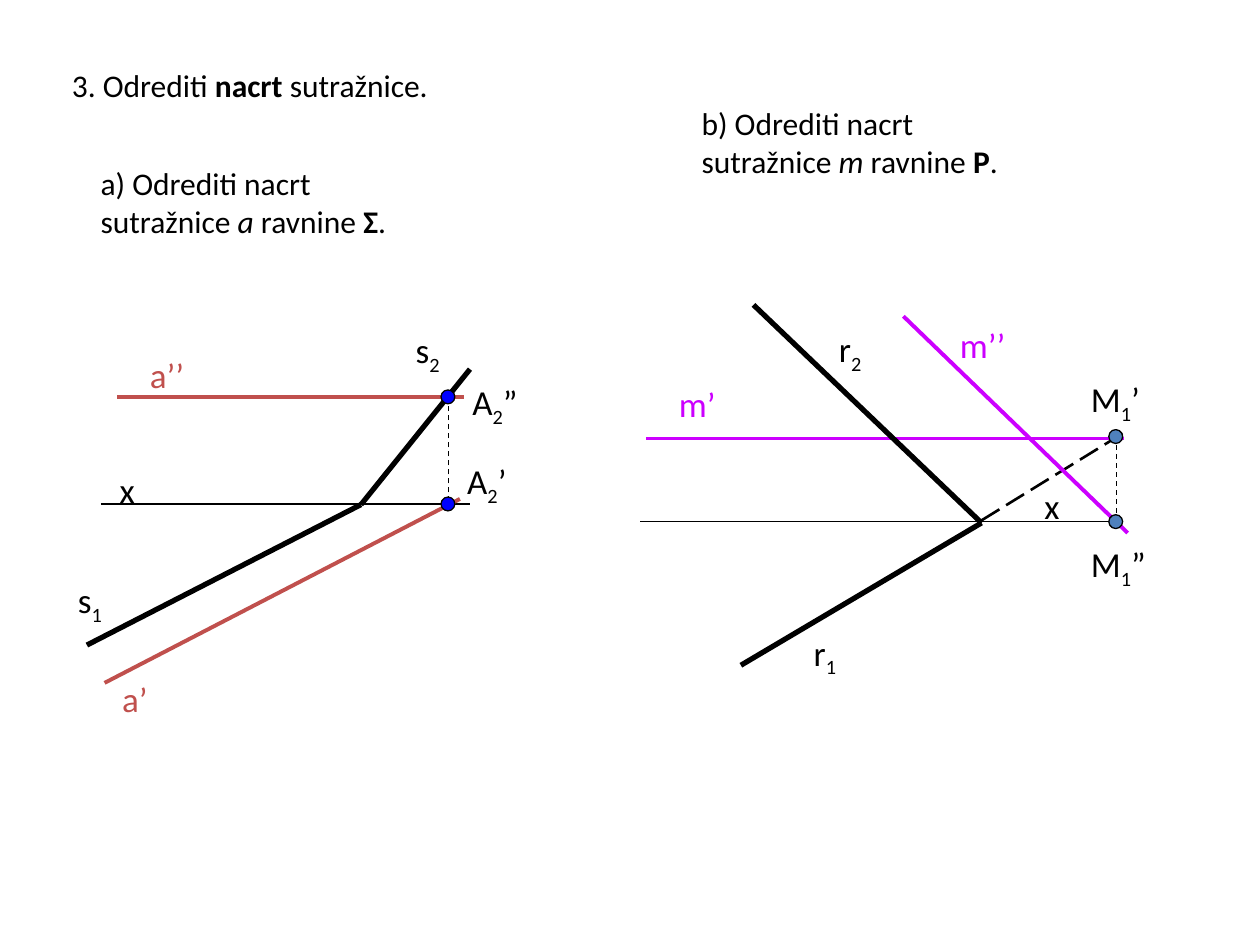
from itertools import pairwise

from lxml.etree import SubElement
from pptx import Presentation
from pptx.dml.color import RGBColor
from pptx.enum.dml import MSO_LINE
from pptx.enum.shapes import MSO_CONNECTOR, MSO_SHAPE
from pptx.enum.text import MSO_ANCHOR, MSO_AUTO_SIZE, PP_ALIGN
from pptx.oxml.ns import qn
from pptx.util import Inches, Pt

BLACK = RGBColor(0x00, 0x00, 0x00)
RED = RGBColor(0xC0, 0x50, 0x4D)
MAGENTA = RGBColor(0xCC, 0x00, 0xFF)
BLUE = RGBColor(0x00, 0x00, 0xFF)
STEEL = RGBColor(0x4F, 0x81, 0xBD)

COLS, ROWS = 100, 75
THIN, DASHED, TRACE_LINE, TRACE = 0.75, 1.5, 2.25, 3
DOT = 1.1


class Board:
    """Draws on one slide; every length is in columns and rows of the grid."""

    font = "Calibri"
    text_size, label_size = 18, 20

    def __init__(self, prs):
        self.s = prs.slides.add_slide(prs.slide_layouts[5])
        self.col = prs.slide_width / COLS
        self.row = prs.slide_height / ROWS

    def place(self, x, y, w, h):
        return (round(x * self.col), round(y * self.row),
                round(w * self.col), round(h * self.row))

    def fill_text(self, sp, parts, size, color=BLACK):
        """Fill sp with (text, style) parts; style is "", "b", "i" or "sub"."""
        tf = sp.text_frame
        tf.word_wrap = True
        tf.auto_size = MSO_AUTO_SIZE.NONE
        tf.vertical_anchor = MSO_ANCHOR.TOP
        p = tf.paragraphs[0]
        p.alignment = PP_ALIGN.LEFT
        for text, style in parts:
            r = p.add_run()
            r.text = text
            r.font.name = self.font
            r.font.size = Pt(size)
            r.font.color.rgb = color
            r.font.bold = style == "b"
            r.font.italic = style == "i"
            if style == "sub":
                r.font._element.set("baseline", "-25000")

    def title(self, box, parts):
        sp = self.s.shapes.title
        sp.left, sp.top, sp.width, sp.height = self.place(*box)
        self.fill_text(sp, parts, self.text_size)

    def text(self, box, parts):
        sp = self.s.shapes.add_textbox(*self.place(*box))
        self.fill_text(sp, parts, self.text_size)

    def label(self, x, y, w, name, sub="", primes="", color=BLACK):
        sp = self.s.shapes.add_textbox(*self.place(x, y, w, 4.4))
        parts = [(name, ""), (sub, "sub"), (primes, "")]
        self.fill_text(sp, [part for part in parts if part[0]],
                       self.label_size, color)

    def line(self, *points, width=THIN, color=BLACK, dash=None):
        """Join the points, in order, with straight lines."""
        for (x1, y1), (x2, y2) in pairwise(points):
            c = self.s.shapes.add_connector(
                MSO_CONNECTOR.STRAIGHT,
                *self.place(x1, y1, x2, y2))
            c.line.width = Pt(width)
            c.line.color.rgb = color
            if dash:
                c.line.dash_style = dash
            SubElement(c._element.spPr, qn("a:effectLst"))

    def dot(self, x, y, color):
        """Mark the point with its centre at x, y."""
        sp = self.s.shapes.add_shape(
            MSO_SHAPE.OVAL, *self.place(x - DOT / 2, y - DOT / 2, DOT, DOT))
        sp.shadow.inherit = False
        sp.fill.solid()
        sp.fill.fore_color.rgb = color
        sp.line.color.rgb = BLACK
        sp.line.width = Pt(THIN)


def draw_task_a(b):
    b.text((7, 12.5, 26.6, 7.1),
           [("a) Odrediti nacrt sutražnice ", ""), ("a", "i"),
            (" ravnine ", ""), ("Σ", "b"), (".", "")])
    b.line((8, 40), (37.3, 40))
    b.line((37.3, 29.3), (28.65, 40.05), (6.9, 51.2), width=TRACE)
    b.line((8.3, 54.2), (36.5, 39.6), width=TRACE_LINE, color=RED)
    b.line((9.3, 31.5), (36.8, 31.5), width=TRACE_LINE, color=RED)
    b.line((35.6, 39.8), (35.6, 31.1), dash=MSO_LINE.DASH)
    for y in (31.5, 40):
        b.dot(35.55, y, BLUE)
    b.label(5.2, 45.4, 6.5, "s", "1")
    b.label(32, 25.6, 5.1, "s", "2")
    b.label(8.7, 53.3, 7.1, "a’", color=RED)
    b.label(10.9, 27.6, 5.9, "a’’", color=RED)
    b.label(36.1, 36, 5.7, "A", "2", "’")
    b.label(36.5, 29.7, 6.6, "A", "2", "”")
    b.label(8.5, 36.7, 4.1, "x")


def draw_task_b(b):
    b.text((54.7, 7.8, 25.7, 7.1),
           [("b) Odrediti nacrt sutražnice ", ""), ("m", "i"),
            (" ravnine ", ""), ("P", "b"), (".", "")])
    b.line((51.3, 34.8), (85.9, 34.8), (89.2, 34.8),
           width=TRACE_LINE, color=MAGENTA)
    b.line((50.8, 41.4), (89, 41.4))
    b.line((59.8, 24.2), (77.9, 41.5), (58.8, 52.8), width=TRACE)
    b.line((77.9, 41.3), (89.1, 34.4), width=DASHED, dash=MSO_LINE.LONG_DASH)
    b.line((71.7, 25.1), (89.5, 42.3), width=TRACE_LINE, color=MAGENTA)
    b.line((88.6, 34.6), (88.6, 41.4), dash=MSO_LINE.DASH)
    for y in (34.65, 41.4):
        b.dot(88.55, y, STEEL)
    b.label(63.6, 49.6, 6.4, "r", "1")
    b.label(65.6, 25.5, 6.8, "r", "2")
    b.label(52.9, 29.9, 7.9, "m’", color=MAGENTA)
    b.label(75.2, 25.2, 6.9, "m’’", color=MAGENTA)
    b.label(85.6, 29.5, 6.6, "M", "1", "’")
    b.label(85.6, 42.6, 6.7, "M", "1", "”")
    b.label(81.9, 38, 4.2, "x")


def main():
    prs = Presentation()
    prs.slide_width, prs.slide_height = Inches(10), Inches(7.5)
    b = Board(prs)
    b.title((4.7, 4.7, 42, 4),
            [("3. Odrediti ", ""), ("nacrt ", "b"), ("sutražnice.", "")])
    draw_task_a(b)
    draw_task_b(b)
    prs.save("out.pptx")


if __name__ == "__main__":
    main()
